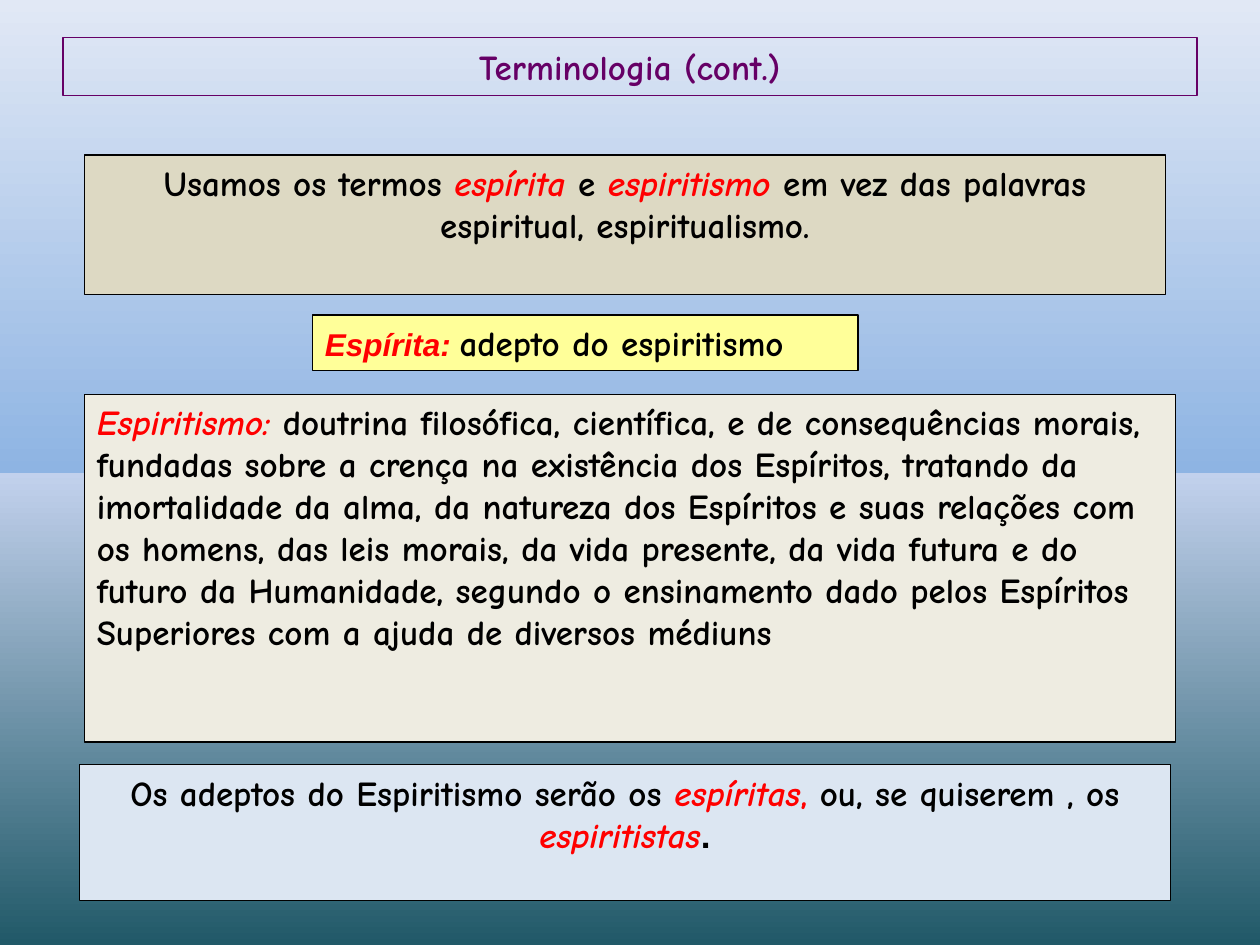
"""Build the slide "Terminologia (cont.)" on the terms of Spiritism."""
from lxml import etree
from pptx import Presentation
from pptx.dml.color import RGBColor
from pptx.enum import shapes, text
from pptx.oxml import ns
from pptx.util import Inches, Pt

COLORS = {
    "purple": "660066", "black": "000000", "red": "FF0000",
    "sand": "DDD9C3", "cream": "EEECE1", "yellow": "FFFF99", "sky": "DCE6F2",
}
BACKDROP = [(0, "215968"), (50, "C2D1ED"), (50, "8EB4E3"), (100, "E1E8F5")]
BACKDROP_ANGLE = 270

STYLES = {
    "title": ("Comic Neue", 20, "purple", False),
    "plain": ("Comic Neue", 20, "black", False),
    "term": ("Comic Neue", 20, "red", True),
    "comma": ("Comic Neue", 20, "red", False),
    "heading": ("Arial", 18, "red", True),
    "stop": ("Arial", 20, "black", False),
}

CENTER, LEFT = text.PP_ALIGN.CENTER, text.PP_ALIGN.LEFT
TOP, MIDDLE = text.MSO_ANCHOR.TOP, text.MSO_ANCHOR.MIDDLE

PANELS = [
    ((0.5, 0.3, 9, 0.46), None, "purple", CENTER, MIDDLE, [
        ("Terminologia (cont.)", "title"),
    ]),
    ((0.67, 1.23, 8.58, 1.11), "sand", "black", CENTER, TOP, [
        ("Usamos os termos ", "plain"),
        ("espírita ", "term"),
        ("e ", "plain"),
        ("espiritismo ", "term"),
        ("em vez das palavras espiritual, espiritualismo.", "plain"),
    ]),
    ((0.67, 3.13, 8.66, 2.76), "cream", "black", LEFT, TOP, [
        ("Espiritismo: ", "term"),
        ("doutrina filosófica, científica, e de consequências morais, "
         "fundadas sobre a crença na existência dos Espíritos, tratando da "
         "imortalidade da alma, da natureza dos Espíritos e suas relações com "
         "os homens, das leis morais, da vida presente, da vida futura e do "
         "futuro da Humanidade, segundo o ensinamento dado pelos Espíritos "
         "Superiores com a ajuda de diversos médiuns", "plain"),
    ]),
    ((2.48, 2.5, 4.33, 0.44), "yellow", "black", LEFT, TOP, [
        ("Espírita: ", "heading"),
        ("adepto do espiritismo", "plain"),
    ]),
    ((0.63, 6.07, 8.66, 1.08), "sky", "black", CENTER, TOP, [
        ("Os adeptos do Espiritismo serão os ", "plain"),
        ("espíritas", "term"),
        (",", "comma"),
        (" ou, se quiserem , os ", "plain"),
        ("espiritistas", "term"),
        (".", "stop"),
    ]),
]


def rgb(name):
    return RGBColor.from_string(COLORS[name])


def paint_backdrop(slide):
    slide.background.fill.gradient()
    gradient = slide.background._cSld.find(".//" + ns.qn("a:gradFill"))
    for child in list(gradient):
        gradient.remove(child)
    stops = etree.SubElement(gradient, ns.qn("a:gsLst"))
    for position, color in BACKDROP:
        stop = etree.SubElement(stops, ns.qn("a:gs"), pos=str(position * 1000))
        etree.SubElement(stop, ns.qn("a:srgbClr"), val=color)
    etree.SubElement(gradient, ns.qn("a:lin"),
                     ang=str(BACKDROP_ANGLE * 60000), scaled="0")


def add_panel(slide, place, fill, outline, align, anchor, runs):
    panel = slide.shapes.add_shape(
        shapes.MSO_SHAPE.RECTANGLE, *(Inches(length) for length in place))
    panel.shadow.inherit = False
    if fill:
        panel.fill.solid()
        panel.fill.fore_color.rgb = rgb(fill)
    else:
        panel.fill.background()
    panel.line.color.rgb = rgb(outline)
    panel.line.width = Pt(0.75)

    frame = panel.text_frame
    frame.word_wrap = True
    frame.vertical_anchor = anchor
    paragraph = frame.paragraphs[0]
    paragraph.alignment = align
    for words, style in runs:
        face, size, color, italic = STYLES[style]
        run = paragraph.add_run()
        run.text = words
        run.font.name = face
        run.font.size = Pt(size)
        run.font.bold = True
        run.font.italic = italic
        run.font.color.rgb = rgb(color)


def main():
    deck = Presentation()
    deck.slide_width, deck.slide_height = Inches(10), Inches(7.5)
    slide = deck.slides.add_slide(deck.slide_layouts[6])
    paint_backdrop(slide)
    for panel in PANELS:
        add_panel(slide, *panel)
    deck.save("out.pptx")


if __name__ == "__main__":
    main()
